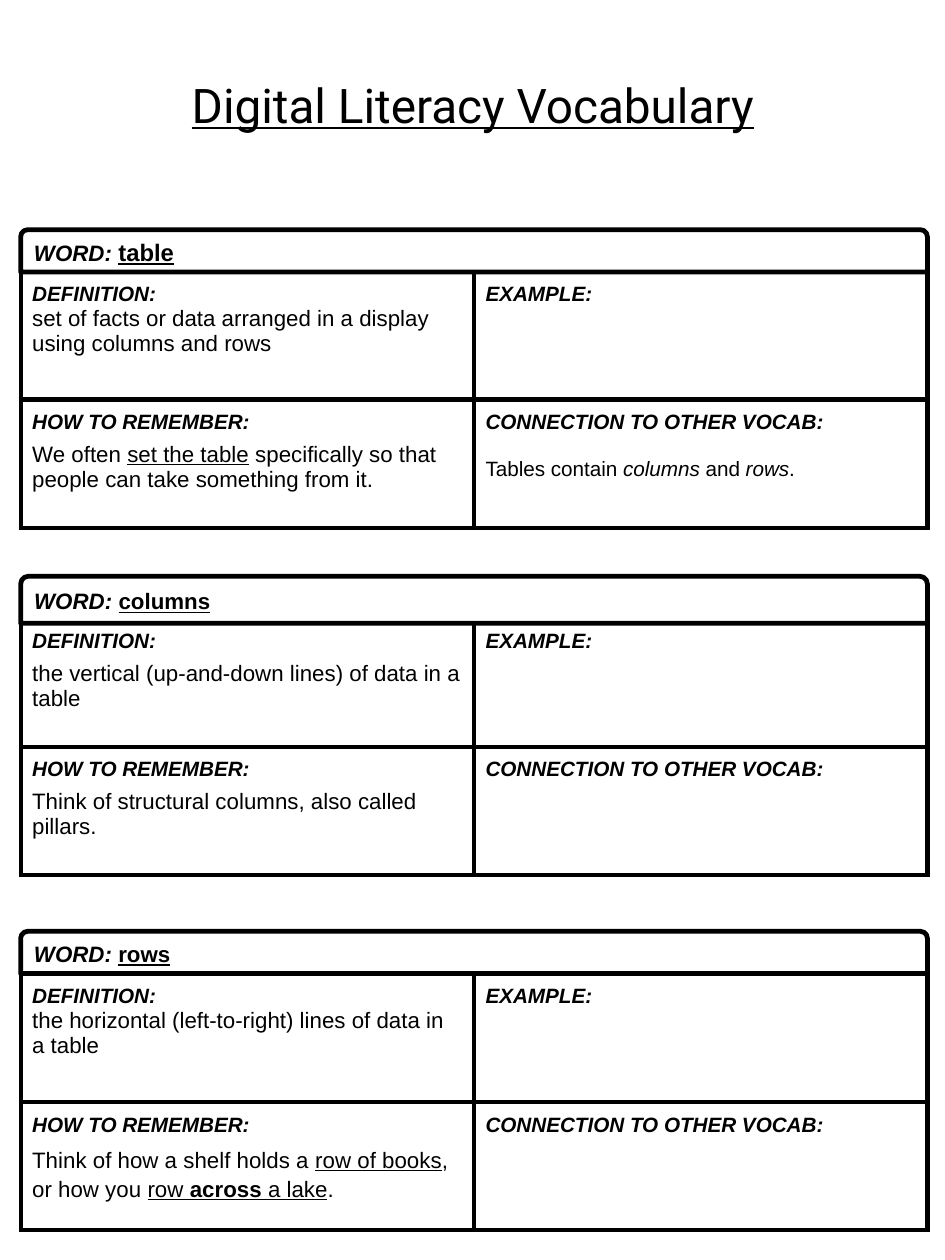
import pptx
import pptx.util
import pptx.dml.color
import pptx.enum.shapes
import pptx.enum.text
import pptx.oxml
import pptx.oxml.ns

Pt = pptx.util.Pt
ANCHOR = pptx.enum.text.MSO_ANCHOR
COLORS = {"ink": "000000", "paper": "FFFFFF"}
LINE = 3      # border width
PAD = 7.2     # inner margin of every text area
LEFT, WIDE = 13, 570
ROW = 80.6    # height of a table row


def color(name):
    return pptx.dml.color.RGBColor.from_string(COLORS[name])


def write(para, text, size=14, font="Arial", marks=""):
    """Add a run; marks holds any of b (bold), i (italic), u (underline)."""
    run = para.add_run()
    run.text = text
    run.font.size = Pt(size)
    run.font.name = font
    run.font.color.rgb = color("ink")
    run.font.bold = "b" in marks
    run.font.italic = "i" in marks
    run.font.underline = "u" in marks


def pad(area):
    area.margin_left = area.margin_right = Pt(PAD)
    area.margin_top = area.margin_bottom = Pt(PAD)


def border(cell):
    props = cell._tc.get_or_add_tcPr()
    for i, side in enumerate(("lnL", "lnR", "lnT", "lnB")):
        props.insert(i, pptx.oxml.parse_xml(
            f'<a:{side} {pptx.oxml.ns.nsdecls("a")} w="{Pt(LINE)}">'
            f'<a:solidFill><a:srgbClr val="{COLORS["ink"]}"/></a:solidFill>'
            f'</a:{side}>'))


def title(slide, text, left, top, width, height):
    shape = slide.shapes.title
    shape.left, shape.top = Pt(left), Pt(top)
    shape.width, shape.height = Pt(width), Pt(height)
    frame = shape.text_frame
    frame.auto_size = pptx.enum.text.MSO_AUTO_SIZE.NONE
    frame.vertical_anchor = ANCHOR.TOP
    pad(frame)
    para = frame.paragraphs[0]
    para.alignment = pptx.enum.text.PP_ALIGN.CENTER
    write(para, text, size=30, font="Roboto", marks="u")


def grid(slide, cells, left, top, width, height):
    """Two by two table of labelled notes."""
    table = slide.shapes.add_table(
        2, 2, Pt(left), Pt(top), Pt(width), Pt(height)).table
    table.first_row = table.horz_banding = False
    labels = ("DEFINITION:", "EXAMPLE:",
              "HOW TO REMEMBER:", "CONNECTION TO OTHER VOCAB:")
    for cell, label in zip(table.iter_cells(), labels):
        cell.fill.solid()
        cell.fill.fore_color.rgb = color("paper")
        border(cell)
        pad(cell)
        frame = cell.text_frame
        write(frame.paragraphs[0], label, size=13, marks="bi")
        if label in cells:
            note = cells[label]
            para = frame.add_paragraph()
            para.space_before = Pt(note.get("gap", 0))
            para.line_spacing = note.get("lines", 1.0)
            for text, marks in note["runs"]:
                write(para, text, size=note.get("size", 14), marks=marks)


def head(slide, word, size, left, top, width, height):
    """Rounded bar that names the word."""
    bar = slide.shapes.add_shape(
        pptx.enum.shapes.MSO_SHAPE.ROUND_2_SAME_RECTANGLE,
        Pt(left), Pt(top), Pt(width), Pt(height))
    bar.shadow.inherit = False
    bar.fill.solid()
    bar.fill.fore_color.rgb = color("paper")
    bar.line.color.rgb = color("ink")
    bar.line.width = Pt(LINE)
    frame = bar.text_frame
    frame.word_wrap = True
    frame.vertical_anchor = ANCHOR.MIDDLE
    pad(frame)
    para = frame.paragraphs[0]
    para.alignment = pptx.enum.text.PP_ALIGN.LEFT
    write(para, "WORD: ", marks="bi")
    write(para, word, size=size, marks="bu")


def card(slide, word, cells, top, bar, body, size=14):
    """Vocabulary card: bar from top, table from body down."""
    grid(slide, cells, LEFT, body, WIDE, 2 * ROW)
    head(slide, word, size, LEFT, top, WIDE, bar)


CARDS = [
    dict(word="table", size=15, top=144.4, bar=26.6, body=170.6, cells={
        "DEFINITION:": dict(runs=[
            ("set of facts or data arranged in a display using columns and rows", "")]),
        "HOW TO REMEMBER:": dict(gap=5, runs=[
            ("We often ", ""), ("set the table", "u"),
            (" specifically so that people can take something from it.", "")]),
        "CONNECTION TO OTHER VOCAB:": dict(gap=15, size=13, runs=[
            ("Tables contain ", ""), ("columns", "i"), (" and ", ""),
            ("rows", "i"), (".", "")]),
    }),
    dict(word="columns", top=362.2, bar=29.5, body=388.8, cells={
        "DEFINITION:": dict(gap=5, runs=[
            ("the vertical (up-and-down lines) of data in a table", "")]),
        "HOW TO REMEMBER:": dict(gap=5, runs=[
            ("Think of structural columns, also called pillars.", "")]),
    }),
    dict(word="rows", top=585.4, bar=26.6, body=612, cells={
        "DEFINITION:": dict(runs=[
            ("the horizontal (left-to-right) lines of data in a table", "")]),
        "HOW TO REMEMBER:": dict(gap=5, lines=1.15, runs=[
            ("Think of how a shelf holds a ", ""), ("row of books", "u"),
            (", or how you ", ""), ("row", "u"), (" across ", "bu"),
            ("a lake", "u"), (".", "")]),
    }),
]


def main():
    deck = pptx.Presentation()
    deck.slide_width, deck.slide_height = Pt(594), Pt(792)
    slide = deck.slides.add_slide(deck.slide_layouts[5])
    title(slide, "Digital Literacy Vocabulary", 46.8, 40.3, 501, 62.6)
    for item in CARDS:
        card(slide, **item)
    deck.save("out.pptx")


if __name__ == "__main__":
    main()
